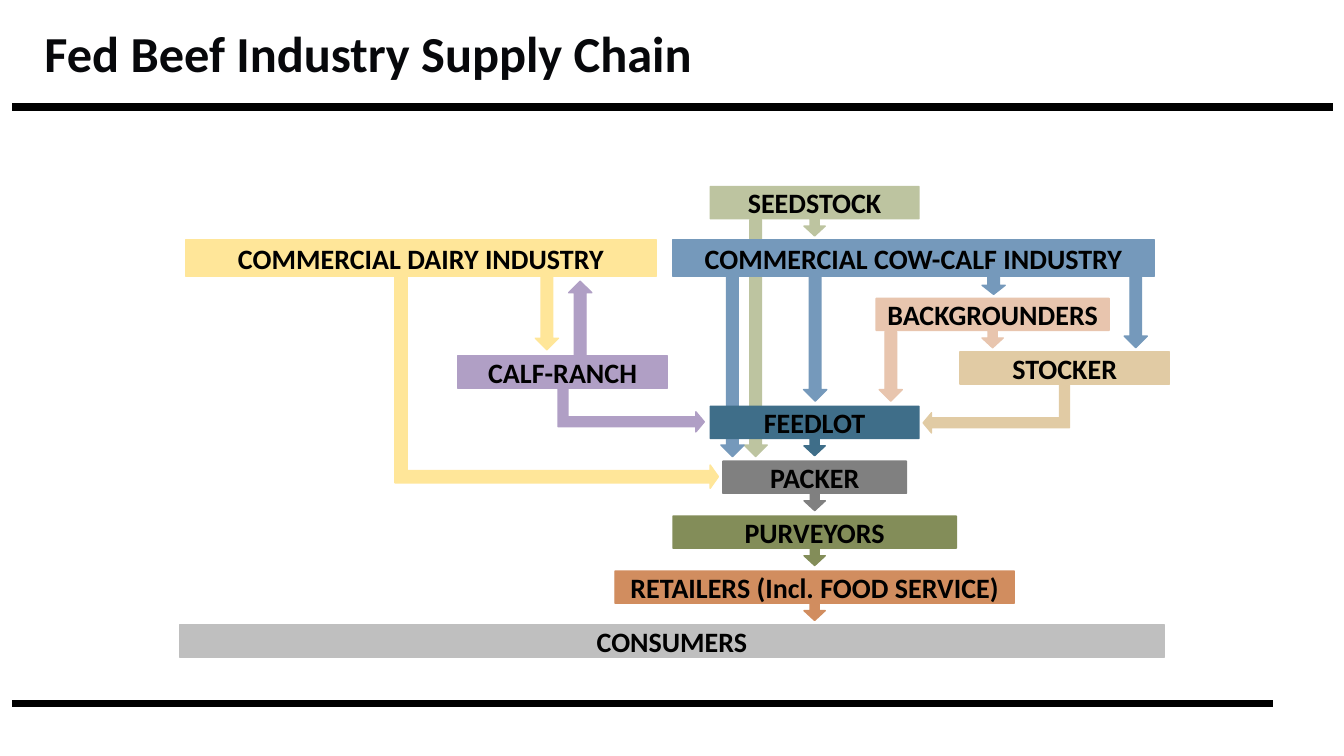
from pptx import Presentation
from pptx.dml.color import RGBColor
from pptx.enum.shapes import MSO_CONNECTOR, MSO_SHAPE
from pptx.enum.text import MSO_ANCHOR, PP_ALIGN
from pptx.util import Inches, Pt
from lxml import etree

STRAIGHT = MSO_CONNECTOR.STRAIGHT
RECTANGLE = MSO_SHAPE.RECTANGLE
CALLOUT = MSO_SHAPE.DOWN_ARROW_CALLOUT
DOWN, UP = MSO_SHAPE.DOWN_ARROW, MSO_SHAPE.UP_ARROW
BENT = MSO_SHAPE.BENT_UP_ARROW
MIDDLE, CENTER, LEFT = MSO_ANCHOR.MIDDLE, PP_ALIGN.CENTER, PP_ALIGN.LEFT
DRAWING = "http://schemas.openxmlformats.org/drawingml/2006/main"

COLORS = {
    "rule": "000000", "title": "07080B", "label": "000000",
    "calf_ranch": "B09FC5", "dairy": "FFE699", "cow_calf": "7599BB",
    "seedstock": "BDC4A0", "backgrounders": "E8C5AE", "stocker": "E1CBA4",
    "feedlot": "3F6E89", "packer": "808080", "purveyors": "838D59",
    "retailers": "D18D5F", "consumers": "BFBFBF",
}
FORMATS = {
    "title": {"name": "Calibri", "size": Pt(36), "bold": True},
    "label": {"name": "Calibri", "size": Pt(20), "bold": True},
}
FRAME = {"margin_left": 0, "margin_right": 0, "margin_top": 0,
         "margin_bottom": 0, "word_wrap": True, "vertical_anchor": MIDDLE}
CALLOUT_ADJUSTMENTS = (0.18, 0.215, 0.198, 0.65)
SHORT_BEND = (0.203, 0.208, 0.174)
LONG_BEND = (0.058, 0.055, 0.039)

SPINE_CENTER, SPINE_TOP, LEVEL_STEP = 8.08, 1.85, 0.545
BOX_HEIGHT, CALLOUT_HEIGHT, ARROW_WIDTH = 0.32, 0.49, 0.23

BENT_ARROWS = [
    ("calf_ranch", 6.02, 3.32, 0.48, 1.45, SHORT_BEND, 90, False),
    ("dairy", 4.47, 2.19, 2.1, 3.21, LONG_BEND, 90, False),
    ("stocker", 9.64, 3.33, 0.48, 1.45, SHORT_BEND, 270, True),
]
ARROWS = [
    ("cow_calf", DOWN, 7.97, 2.71, 1.27),
    ("dairy", DOWN, 5.31, 2.68, 0.79),
    ("calf_ranch", UP, 5.64, 2.79, 0.76),
    ("seedstock", DOWN, 7.38, 2.18, 2.35),
    ("backgrounders", DOWN, 8.72, 3.29, 0.69),
    ("cow_calf", DOWN, 9.74, 2.74, 0.18),
    ("cow_calf", DOWN, 7.15, 2.74, 1.79),
    ("cow_calf", DOWN, 11.15, 2.68, 0.77),
]
BOXES = [
    ("CALF-RANCH", "calf_ranch", 4.54, 3.53, 2.08, BOX_HEIGHT),
    ("COMMERCIAL DAIRY INDUSTRY", "dairy", 1.84, 2.38, 4.67, 0.36),
    ("COMMERCIAL COW-CALF INDUSTRY", "cow_calf", 6.67, 2.38, 4.78, 0.36),
    ("STOCKER", "stocker", 9.52, 3.49, 2.08, BOX_HEIGHT),
    ("CONSUMERS", "consumers", 1.78, 6.2, 9.77, BOX_HEIGHT),
]
SPINE = [
    ("SEEDSTOCK", "seedstock", 0, 2.07),
    ("FEEDLOT", "feedlot", 4, 2.07),
    ("PACKER", "packer", 5, 1.82),
    ("PURVEYORS", "purveyors", 6, 2.81),
    ("RETAILERS (Incl. FOOD SERVICE)", "retailers", 7, 3.96),
]


class SupplyChainSlide:
    """Hold the style and the current slide, and draw each kind of element."""

    def __init__(self, deck):
        self.page = deck.slides.add_slide(deck.slide_layouts[5])

    def color(self, name):
        return RGBColor.from_string(COLORS[name])

    def add_text(self, box, text, style, align):
        frame = box.text_frame
        for key, value in FRAME.items():
            setattr(frame, key, value)
        para = frame.paragraphs[0]
        para.alignment = align
        span = para.add_run()
        span.text = text
        for key, value in FORMATS[style].items():
            setattr(span.font, key, value)
        span.font.color.rgb = self.color(style)
        return para

    def title(self, text, left, top, width, height):
        box = self.page.shapes.title
        place = {"left": left, "top": top, "width": width, "height": height}
        for key, value in place.items():
            setattr(box, key, Inches(value))
        para = self.add_text(box, text, "title", LEFT)
        para.line_spacing = 0.9
        box.text_frame.margin_left = Inches(0.1)

    def rule(self, left, right, top):
        line = self.page.shapes.add_connector(
            STRAIGHT, Inches(left), Inches(top), Inches(right), Inches(top))
        line.line.color.rgb = self.color("rule")
        line.line.width = Pt(5.5)
        etree.SubElement(line.element.spPr, f"{{{DRAWING}}}effectLst")

    def shape(self, kind, color, left, top, width, height, adjustments=()):
        item = self.page.shapes.add_shape(
            kind, Inches(left), Inches(top), Inches(width), Inches(height))
        item.shadow.inherit = False
        item.fill.solid()
        item.fill.fore_color.rgb = self.color(color)
        item.line.color.rgb = self.color(color)
        item.line.width = Pt(1)
        for index, value in enumerate(adjustments):
            item.adjustments[index] = value
        return item

    def bent_arrow(self, color, left, top, width, height, bend, turn, flipped):
        arrow = self.shape(BENT, color, left, top, width, height, bend)
        arrow.rotation = turn
        if flipped:
            arrow.element.spPr.xfrm.set("flipH", "1")

    def arrow(self, color, kind, left, top, height):
        self.shape(kind, color, left, top, ARROW_WIDTH, height)

    def box(self, text, color, left, top, width, height):
        box = self.shape(RECTANGLE, color, left, top, width, height)
        self.add_text(box, text, "label", CENTER)

    def callout(self, text, color, left, top, width):
        box = self.shape(CALLOUT, color, left, top, width, CALLOUT_HEIGHT,
                         CALLOUT_ADJUSTMENTS)
        self.add_text(box, text, "label", CENTER)


def main():
    deck = Presentation()
    deck.slide_width, deck.slide_height = Inches(13.33), Inches(7.5)
    slide = SupplyChainSlide(deck)
    slide.title("Fed Beef Industry Supply Chain", 0.34, 0.15, 11.5, 0.82)
    slide.rule(0.12, 13.22, 1.06)
    slide.rule(0.12, 12.63, 6.98)
    for bent_arrow in BENT_ARROWS:
        slide.bent_arrow(*bent_arrow)
    for arrow in ARROWS:
        slide.arrow(*arrow)
    for box in BOXES:
        slide.box(*box)
    slide.callout("BACKGROUNDERS", "backgrounders", 8.69, 2.96, 2.31)
    for text, color, level, width in SPINE:
        slide.callout(text, color, SPINE_CENTER - width / 2,
                      SPINE_TOP + level * LEVEL_STEP, width)
    deck.save("out.pptx")


if __name__ == "__main__":
    main()
